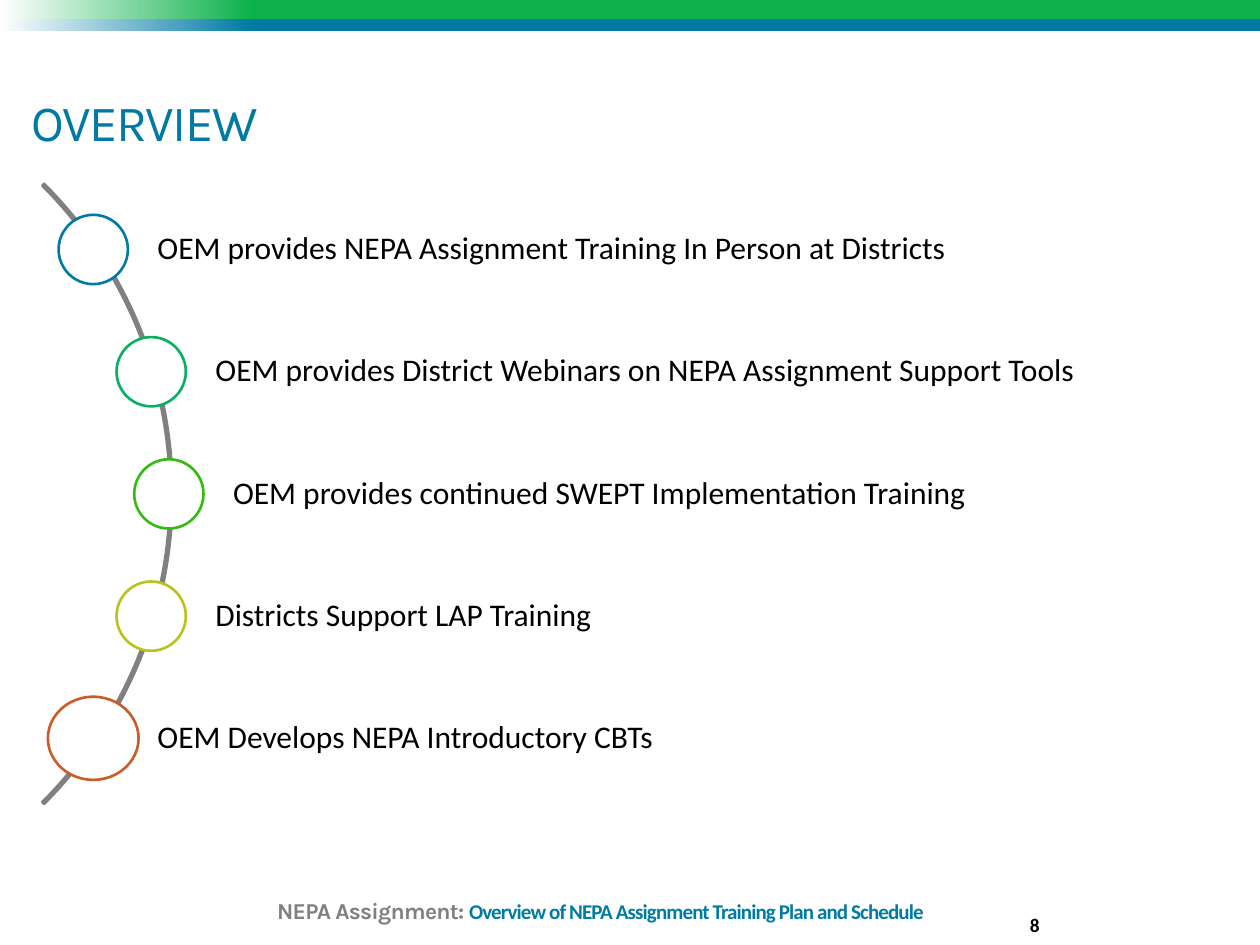
from dataclasses import dataclass

from pptx import Presentation
from pptx.dml.color import RGBColor
from pptx.enum.shapes import MSO_SHAPE
from pptx.enum.text import MSO_ANCHOR, PP_ALIGN
from pptx.shapes.autoshape import Shape
from pptx.slide import Slide
from pptx.text.text import _Paragraph as Paragraph
from pptx.util import Inches, Pt

RECTANGLE, OVAL, ARC = MSO_SHAPE.RECTANGLE, MSO_SHAPE.OVAL, MSO_SHAPE.BLOCK_ARC
BOTTOM, MIDDLE = MSO_ANCHOR.BOTTOM, MSO_ANCHOR.MIDDLE
RIGHT = PP_ALIGN.RIGHT

WHITE = RGBColor(0xFF, 0xFF, 0xFF)
BLACK = RGBColor(0x00, 0x00, 0x00)
GRAY = RGBColor(0x80, 0x80, 0x80)
BLUE = RGBColor(0x00, 0x7A, 0xA4)
FOOTER_BLUE = RGBColor(0x00, 0x7B, 0xA2)
BAND_GREEN = RGBColor(0x0D, 0xB1, 0x4B)
TEAL = RGBColor(0x08, 0xB0, 0x60)
GREEN = RGBColor(0x35, 0xBA, 0x11)
OLIVE = RGBColor(0xBA, 0xC3, 0x1C)
ORANGE = RGBColor(0xCA, 0x5C, 0x28)

FIRST_CENTER = 1.98
STEP = 0.97
TEXT_RIGHT = 9.68
TEXT_HEIGHT = 0.65


@dataclass(frozen=True)
class Box:
    left: float
    top: float
    width: float
    height: float

    def lengths(self) -> tuple[Inches, ...]:
        return tuple(map(Inches, (self.left, self.top, self.width, self.height)))


@dataclass(frozen=True)
class Style:
    font: str
    size: float
    color: RGBColor
    bold: bool = False
    spacing: float = 0


@dataclass(frozen=True)
class Step:
    text: str
    center: float
    color: RGBColor
    width: float = 0.55
    height: float = 0.55


TITLE = Style("Karla", 29, BLUE, spacing=-0.9)
FOOTER_LABEL = Style("Karla", 13, GRAY, True, -0.4)
FOOTER_TOPIC = Style("Calibri", 12, FOOTER_BLUE, True, -0.5)
PAGE_NUMBER = Style("Calibri", 11, BLACK, True)
BODY = Style("Calibri", 18, BLACK)

STEPS = [
    Step("OEM provides NEPA Assignment Training In Person at Districts", 0.74, BLUE),
    Step("OEM provides District Webinars on NEPA Assignment Support Tools", 1.2, TEAL),
    Step("OEM provides continued SWEPT Implementation Training", 1.34, GREEN),
    Step("Districts Support LAP Training", 1.2, OLIVE),
    Step("OEM Develops NEPA Introductory CBTs", 0.74, ORANGE, 0.72, 0.66),
]


def add_band(slide: Slide, box: Box, color: RGBColor) -> None:
    band = slide.shapes.add_shape(RECTANGLE, *box.lengths())
    band.shadow.inherit = False
    band.line.fill.background()
    band.fill.gradient()
    band.fill.gradient_angle = 0
    for stop, position, stop_color in zip(
        band.fill.gradient_stops, (0, 0.2), (WHITE, color)
    ):
        stop.position = position
        stop.color.rgb = stop_color


def add_outlined(
    slide: Slide, kind: MSO_SHAPE, box: Box, fill: RGBColor, line: RGBColor
) -> Shape:
    shape = slide.shapes.add_shape(kind, *box.lengths())
    shape.shadow.inherit = False
    shape.fill.solid()
    shape.fill.fore_color.rgb = fill
    shape.line.color.rgb = line
    shape.line.width = Pt(1.5)
    return shape


def add_text(
    slide: Slide,
    box: Box,
    parts: list[tuple[str, Style]],
    anchor: MSO_ANCHOR = BOTTOM,
    left_inset: float = 0,
    line_spacing: float = 1.0,
) -> Paragraph:
    frame = slide.shapes.add_textbox(*box.lengths()).text_frame
    frame.word_wrap = True
    frame.vertical_anchor = anchor
    frame.margin_left = Inches(left_inset)
    frame.margin_right = frame.margin_top = frame.margin_bottom = 0
    paragraph = frame.paragraphs[0]
    paragraph.line_spacing = line_spacing
    for text, style in parts:
        run = paragraph.add_run()
        run.text = text
        font = paragraph.font if len(parts) == 1 else run.font
        font.name = style.font
        font.size = Pt(style.size)
        font.bold = style.bold
        font.color.rgb = style.color
        if style.spacing:
            run._r.get_or_add_rPr().set("spc", str(round(style.spacing * 100)))
    return paragraph


def add_step(slide: Slide, step: Step, middle: float) -> None:
    text_box = Box(
        step.center, middle - TEXT_HEIGHT / 2, TEXT_RIGHT - step.center, TEXT_HEIGHT
    )
    add_text(slide, text_box, [(step.text, BODY)], MIDDLE, 0.51, 0.9)
    circle_box = Box(
        step.center - step.width / 2, middle - step.height / 2, step.width, step.height
    )
    add_outlined(slide, OVAL, circle_box, WHITE, step.color)


def main() -> None:
    presentation = Presentation()
    presentation.slide_width = Inches(10)
    presentation.slide_height = Inches(7.5)
    slide = presentation.slides.add_slide(presentation.slide_layouts[6])

    add_band(slide, Box(0, 0, 10, 0.15), BAND_GREEN)
    add_band(slide, Box(0, 0.15, 10, 0.1), BLUE)
    footer = [
        ("NEPA Assignment: ", FOOTER_LABEL),
        ("Overview of NEPA Assignment Training Plan and Schedule", FOOTER_TOPIC),
    ]
    add_text(slide, Box(2.2, 6.86, 5.54, 0.47), footer, line_spacing=0.8)
    add_text(slide, Box(0.25, 0.3, 9, 0.9), [("OVERVIEW", TITLE)], line_spacing=0.8)
    number = add_text(slide, Box(7.67, 7.03, 0.58, 0.4), [("8", PAGE_NUMBER)])
    number.alignment = RIGHT

    arc = add_outlined(slide, ARC, Box(-5.59, 0.44, 6.96, 6.96), GRAY, GRAY)
    for index, value in enumerate((189, 27, 0.003)):
        arc.adjustments[index] = value
    for index, step in enumerate(STEPS):
        add_step(slide, step, FIRST_CENTER + index * STEP)

    presentation.save("out.pptx")


if __name__ == "__main__":
    main()
